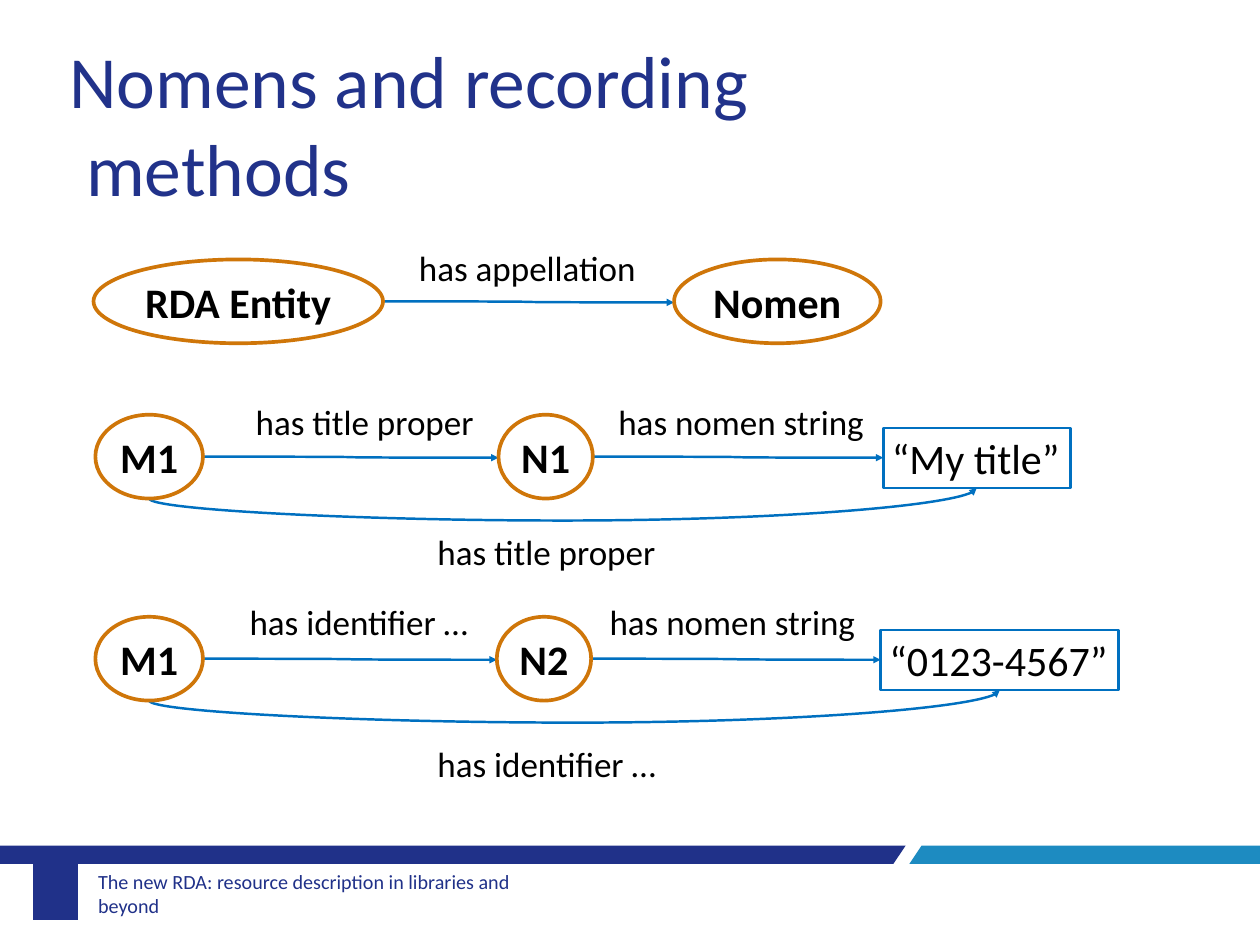
"""Builds the slide on nomens and recording methods in RDA."""
import pptx
import pptx.dml.color
import pptx.enum.shapes
import pptx.enum.text
import pptx.oxml.ns
import pptx.util
from lxml import etree

Pt = pptx.util.Pt
RGBColor = pptx.dml.color.RGBColor
SHAPES = pptx.enum.shapes.MSO_SHAPE
ALIGN = pptx.enum.text.PP_ALIGN
ANCHOR = pptx.enum.text.MSO_ANCHOR
qn = pptx.oxml.ns.qn

NAVY = RGBColor(0x20, 0x31, 0x89)
TITLE_BLUE = RGBColor(0x21, 0x32, 0x8A)
SKY = RGBColor(0x1D, 0x8B, 0xC1)
LINK_BLUE = RGBColor(0x00, 0x70, 0xC0)
ORANGE = RGBColor(0xCF, 0x76, 0x09)
BLACK = RGBColor(0, 0, 0)

TITLE = "Nomens and recording\nmethods"
FOOTER = "The new RDA: resource description in libraries and beyond"

# Each row: top, entities, value box, arrow labels, direct label.
ROWS = [
    (211.7, [("RDA Entity", 76.3, 236.2), ("Nomen", 550.1, 168.5)], None,
     [("has appellation", 334.8, 197.3, 193)], None),
    (338.4, [("M1", 77.8, 87.8), ("N1", 406.8, 77)], ("“My title”", 720.7, 152.6),
     [("has title proper", 201.6, 323.3, 194.4), ("has nomen string", 497.5, 323.3, 216.7)],
     ("has title proper", 349.9, 429.1, 194.4)),
    (503.3, [("M1", 77.8, 87.8), ("N2", 405.4, 77)], ("“0123-4567”", 718.6, 194.4),
     [("has identifier …", 196.6, 486.7, 194.4), ("has nomen string", 490.3, 486.7, 216.7)],
     ("has identifier …", 349.9, 602.6, 194.4)),
]
ENTITY_HEIGHT = 68.4
VALUE_OFFSET, VALUE_HEIGHT = 10.8, 49
LABEL_HEIGHT = 41.8
ARROW_FALL = 0.9
CURVE_DEPTH = 18

BAR_TOP, BAR_BOTTOM, TAB_BOTTOM = 690.5, 704.9, 751
BANDS = [
    (NAVY, [(739.4, BAR_TOP), (0, BAR_TOP), (0, BAR_BOTTOM), (729.4, BAR_BOTTOM)]),
    (SKY, [(1028.16, BAR_TOP), (751.7, BAR_TOP), (741.6, BAR_BOTTOM), (1028.16, BAR_BOTTOM)]),
    (NAVY, [(26.9, TAB_BOTTOM), (64.1, TAB_BOTTOM), (64.1, BAR_TOP), (26.9, BAR_TOP)]),
]


def write(shape, text, size, color=BLACK, bold=False, align=ALIGN.LEFT, wrap=False):
    frame = shape.text_frame
    frame.word_wrap = wrap
    frame.text = text
    for paragraph in frame.paragraphs:
        paragraph.alignment = align
        for run in paragraph.runs:
            run.font.name = "Calibri"
            run.font.size = Pt(size)
            run.font.bold = bold
            run.font.color.rgb = color
    return frame


def add_text(slide, text, left, top, width, height, size, **style):
    box = slide.shapes.add_textbox(Pt(left), Pt(top), Pt(width), Pt(height))
    return write(box, text, size, **style)


def add_label(slide, label):
    text, left, top, width = label
    add_text(slide, text, left, top, width, LABEL_HEIGHT, 28.6)


def add_node(slide, kind, node, top, height, color, line_width, **style):
    text, left, width = node
    shape = slide.shapes.add_shape(kind, Pt(left), Pt(top), Pt(width), Pt(height))
    shape.shadow.inherit = False
    shape.fill.background()
    shape.line.color.rgb = color
    shape.line.width = Pt(line_width)
    write(shape, text, 34.3, **style).vertical_anchor = ANCHOR.MIDDLE


def add_arrow(slide, start, end):
    connector = slide.shapes.add_connector(
        pptx.enum.shapes.MSO_CONNECTOR.CURVE, *map(Pt, start + end))
    connector.line.color.rgb = LINK_BLUE
    connector.line.width = Pt(2)
    properties = connector._element.spPr
    etree.SubElement(properties.find(qn("a:ln")), qn("a:tailEnd"), type="triangle")
    etree.SubElement(properties, qn("a:effectLst"))
    return properties


def add_under_curve(slide, start, end):
    rise, span = start[1] - end[1], end[0] - start[0]
    center_x, center_y = (start[0] + end[0]) / 2, (start[1] + end[1]) / 2
    properties = add_arrow(slide, (center_x + rise / 2, center_y + span / 2),
                           (center_x - rise / 2, center_y - span / 2))
    properties.find(qn("a:xfrm")).set("rot", str(90 * 60000))
    geometry = properties.find(qn("a:prstGeom"))
    adjustments = geometry.find(qn("a:avLst"))
    if adjustments is None:
        adjustments = etree.SubElement(geometry, qn("a:avLst"))
    bend = round(-CURVE_DEPTH / rise * 100000)
    etree.SubElement(adjustments, qn("a:gd"), name="adj1", fmla=f"val {bend}")


def add_row(slide, top, entities, value, labels, direct_label):
    nodes = entities + ([value] if value else [])
    middle = top + ENTITY_HEIGHT / 2
    for (_, left, width), (_, next_left, _) in zip(nodes, nodes[1:]):
        add_arrow(slide, (left + width, middle), (next_left, middle + ARROW_FALL))
    if value:
        (_, left, width), (_, value_left, value_width) = entities[0], value
        value_top = top + VALUE_OFFSET
        add_under_curve(slide, (left + width / 2, top + ENTITY_HEIGHT),
                        (value_left + value_width / 2, value_top + VALUE_HEIGHT))
        add_node(slide, SHAPES.RECTANGLE, value, value_top, VALUE_HEIGHT, LINK_BLUE, 2.25)
        add_label(slide, direct_label)
    for label in labels:
        add_label(slide, label)
    for entity in entities:
        add_node(slide, SHAPES.OVAL, entity, top, ENTITY_HEIGHT, ORANGE, 3,
                 bold=True, align=ALIGN.CENTER)


def add_band(slide, color, points):
    builder = slide.shapes.build_freeform(*points[0], scale=Pt(1))
    builder.add_line_segments(points[1:], close=True)
    band = builder.convert_to_shape()
    band.shadow.inherit = False
    band.fill.solid()
    band.fill.fore_color.rgb = color
    band.line.fill.background()


def main():
    presentation = pptx.Presentation()
    presentation.slide_width, presentation.slide_height = Pt(1028.16), Pt(771.12)
    slide = presentation.slides.add_slide(presentation.slide_layouts[6])
    for color, points in BANDS:
        add_band(slide, color, points)
    footer = add_text(slide, FOOTER, 74.9, 709.2, 397.4, 39.6, 16.4, color=NAVY, wrap=True)
    footer.vertical_anchor = ANCHOR.MIDDLE
    footer.margin_left = footer.margin_right = Pt(5.1)
    footer.margin_top = footer.margin_bottom = Pt(2.9)
    for row in ROWS:
        add_row(slide, *row)
    title = add_text(slide, TITLE, 49.7, 25.2, 571.7, 151.2, 60, color=TITLE_BLUE)
    title.paragraphs[1]._p.get_or_add_pPr().set("marL", str(Pt(13.6)))
    presentation.save("out.pptx")


if __name__ == "__main__":
    main()
